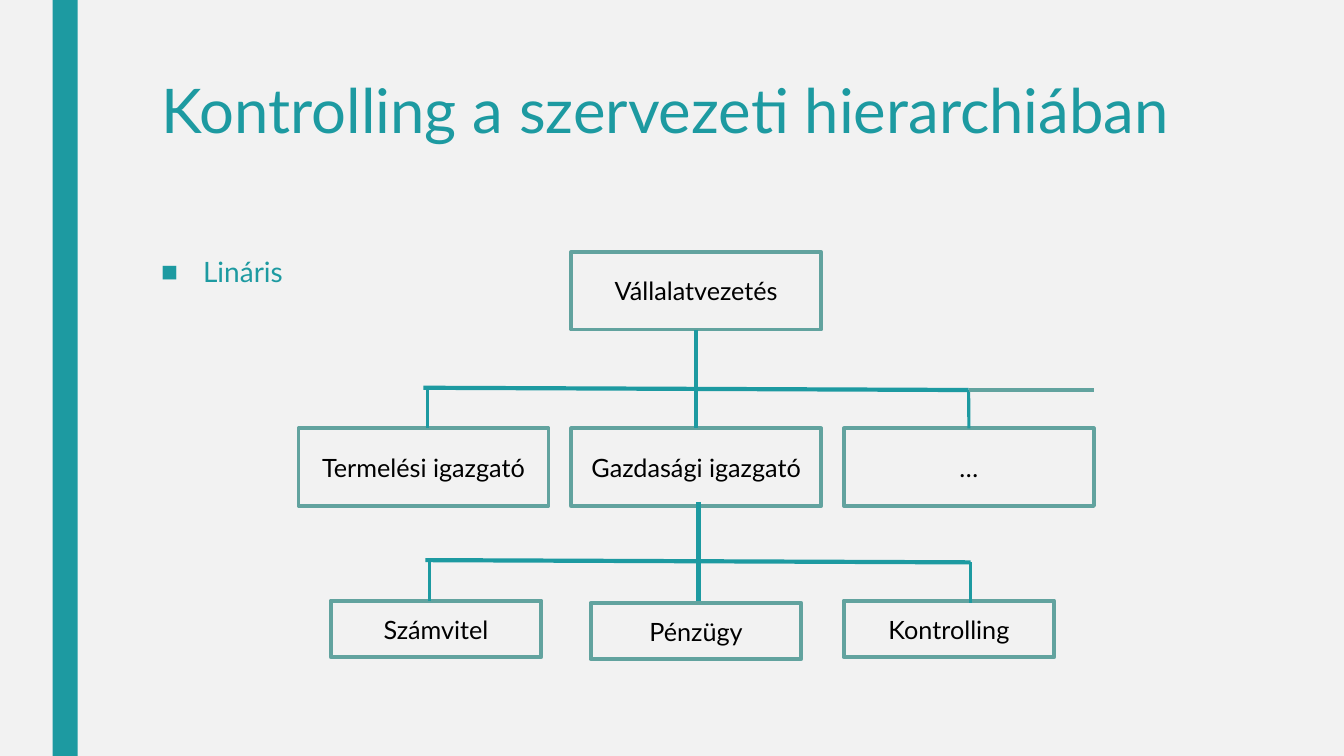
from dataclasses import dataclass

from lxml import etree
from pptx import Presentation
from pptx.dml.color import RGBColor
from pptx.enum.shapes import MSO_CONNECTOR, MSO_SHAPE
from pptx.enum.text import MSO_ANCHOR, MSO_AUTO_SIZE, PP_ALIGN
from pptx.oxml.ns import qn
from pptx.util import Pt

RECTANGLE = MSO_SHAPE.RECTANGLE
STRAIGHT = MSO_CONNECTOR.STRAIGHT
TOP, MIDDLE = MSO_ANCHOR.TOP, MSO_ANCHOR.MIDDLE
LEFT, CENTER = PP_ALIGN.LEFT, PP_ALIGN.CENTER
NO_AUTOFIT = MSO_AUTO_SIZE.NONE
TITLE_ONLY = 5
SIDE_TOP, SIDE_BOTTOM = 0, 2


@dataclass(frozen=True)
class Theme:
    font: str = "Lato"
    background: str = "F2F2F2"
    accent: str = "1D9AA1"
    outline: str = "62A39F"
    ink: str = "000000"
    title_size: float = 44
    body_size: float = 20
    box_size: float = 18
    box_line: float = 2.75
    trunk_line: float = 3
    drop_line: float = 2.25


THEME = Theme()


def rgb(value):
    return RGBColor.from_string(value)


def place(shape, left, top, width, height):
    shape.left, shape.top = Pt(left), Pt(top)
    shape.width, shape.height = Pt(width), Pt(height)


def write(shape, text, size, color, align=LEFT, anchor=TOP, spacing=None):
    """Fill a shape with one formatted paragraph and return it."""
    frame = shape.text_frame
    frame.word_wrap = True
    frame.auto_size = NO_AUTOFIT
    frame.vertical_anchor = anchor
    para = frame.paragraphs[0]
    para.alignment = align
    if spacing:
        para.line_spacing = spacing
    span = para.add_run()
    span.text = text
    span.font.name = THEME.font
    span.font.size = Pt(size)
    span.font.color.rgb = rgb(color)
    return para


def add_bullet(para, char, indent):
    props = para._p.get_or_add_pPr()
    props.set("marL", str(Pt(indent)))
    props.set("indent", str(-Pt(indent)))
    etree.SubElement(props, qn("a:buFont")).set("typeface", "Arial")
    etree.SubElement(props, qn("a:buChar")).set("char", char)


def add_side_bar(page):
    bar = page.shapes.add_shape(RECTANGLE, Pt(37.5), 0, Pt(18), Pt(540))
    bar.shadow.inherit = False
    bar.fill.solid()
    bar.fill.fore_color.rgb = rgb(THEME.accent)
    bar.line.fill.background()


def add_box(page, text, left, top, width, height):
    box = page.shapes.add_shape(RECTANGLE, Pt(left), Pt(top), Pt(width), Pt(height))
    box.shadow.inherit = False
    box.fill.background()
    box.line.color.rgb = rgb(THEME.outline)
    box.line.width = Pt(THEME.box_line)
    write(box, text, THEME.box_size, THEME.ink, align=CENTER, anchor=MIDDLE)
    return box


def add_line(page, start, end, width, color=THEME.accent):
    line = page.shapes.add_connector(STRAIGHT, *map(Pt, start + end))
    line.line.color.rgb = rgb(color)
    line.line.width = Pt(width)
    etree.SubElement(line._element.spPr, qn("a:effectLst"))
    return line


def add_branch(page, x, y):
    """Draw a trunk from (x, y), its crossbar and two outer drops."""
    left, right = x - 192.25, x + 194.4
    bar_left, bar_right = y + 41.6, y + 43.2
    trunk = add_line(page, (x, y), (x, y + 70.6), THEME.trunk_line)
    add_line(page, (x - 195.1, bar_left), (right, bar_right), THEME.trunk_line)
    add_line(page, (left, bar_left), (left, y + 70.6), THEME.drop_line)
    right_drop = add_line(page, (right, bar_right), (right, y + 72), THEME.drop_line)
    return trunk, right_drop


def main():
    deck = Presentation()
    deck.slide_width, deck.slide_height = Pt(960), Pt(540)
    page = deck.slides.add_slide(deck.slide_layouts[TITLE_ONLY])
    page.background.fill.solid()
    page.background.fill.fore_color.rgb = rgb(THEME.background)
    add_side_bar(page)

    # Title and bullet
    title = page.shapes.title
    place(title, 108, 54, 756, 116.6)
    write(title, "Kontrolling a szervezeti hierarchiában",
          THEME.title_size, THEME.accent, spacing=0.89)
    body = page.shapes.add_textbox(Pt(108), Pt(180), Pt(756), Pt(282))
    para = write(body, "Lináris", THEME.body_size, THEME.accent, spacing=0.94)
    para.space_before, para.space_after = Pt(10), Pt(2)
    add_bullet(para, "■", 30)

    # Management and directors
    big, small = (178.6, 55.4), (150.5, 40.3)
    columns = [213.2 + 194.8 * column for column in range(3)]
    lead = add_box(page, "Vállalatvezetés", columns[1], 180, *big)
    directors = [
        add_box(page, text, left, 306, *big)
        for text, left in zip(("Termelési igazgató", "Gazdasági igazgató", "…"), columns)
    ]

    # Departments
    for text, left, top in (("Számvitel", 236.2, 429.1),
                            ("Pénzügy", 421.9, 430.6),
                            ("Kontrolling", 602.6, 429.1)):
        add_box(page, text, left, top, *small)

    # Branches between the levels
    trunk, right_drop = add_branch(page, 497.5, 235.4)
    trunk.begin_connect(lead, SIDE_BOTTOM)
    trunk.end_connect(directors[1], SIDE_TOP)
    right_drop.end_connect(directors[2], SIDE_TOP)
    add_branch(page, 499, 358.5)
    add_line(page, (691.9, 278.6), (781.2, 278.6), THEME.box_line, THEME.outline)

    deck.save("out.pptx")


if __name__ == "__main__":
    main()
